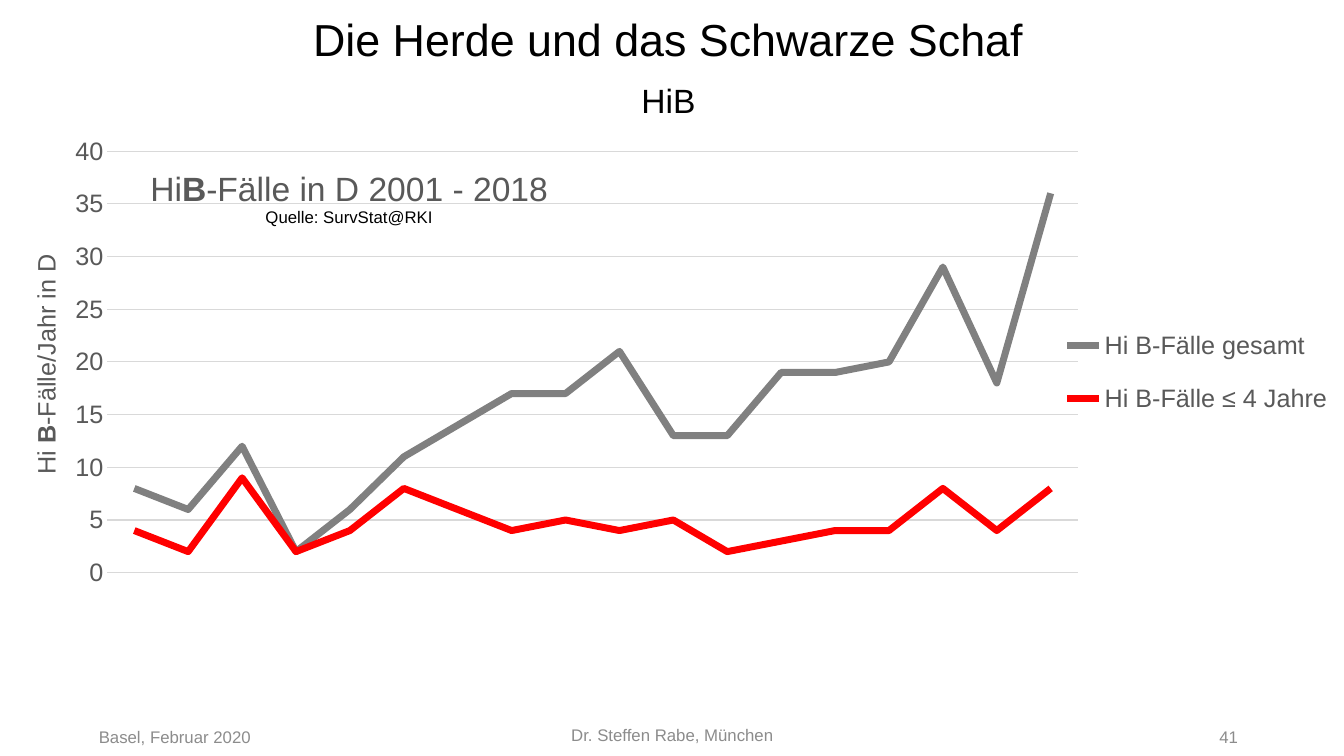
from lxml import etree
from pptx import Presentation
from pptx import util as u
from pptx.chart.data import CategoryChartData
from pptx.dml.color import RGBColor
from pptx.enum import chart as ch, text as t
from pptx.oxml.ns import qn

hue = RGBColor.from_string
GREY, PALE = "595959", "D9D9D9"
LEFT, MID, RIGHT = t.PP_ALIGN.LEFT, t.PP_ALIGN.CENTER, t.PP_ALIGN.RIGHT


def write(par, words, size=18, color="000000", align=MID, bold=False):
    par.alignment = align
    run = par.add_run()
    run.text = words
    font = run.font
    font.name, font.size, font.bold = "Arial", u.Pt(size), bold
    font.color.rgb = hue(color)


def place(node, inner=False, **parts):
    old = node.find(qn("c:layout"))
    if old is not None:
        node.remove(old)
    lay = etree.Element(qn("c:layout"))
    man = etree.SubElement(lay, qn("c:manualLayout"))
    if inner:
        etree.SubElement(man, qn("c:layoutTarget")).set("val", "inner")
    for key in ("xMode", "yMode"):
        etree.SubElement(man, qn("c:" + key)).set("val", "edge")
    for key, val in parts.items():
        etree.SubElement(man, qn("c:" + key)).set("val", str(val))
    over = node.find(qn("c:overlay"))
    if over is None:
        node.insert(0, lay)
    else:
        over.addprevious(lay)


deck = Presentation()
deck.slide_width, deck.slide_height = u.Cm(33.87), u.Cm(19.05)
slide = deck.slides.add_slide(deck.slide_layouts[6])

for x, y, w, words, align in (
    (2.24, 18.06, 7.62, "Basel, Februar 2020", LEFT),
    (11.23, 18.01, 11.43, "Dr. Steffen Rabe, München", MID),
    (23.83, 18.06, 7.62, "41", RIGHT),
):
    frame = slide.shapes.add_textbox(u.Cm(x), u.Cm(y), u.Cm(w), u.Cm(1.02)).text_frame
    frame.word_wrap = True
    frame.vertical_anchor = t.MSO_ANCHOR.MIDDLE
    write(frame.paragraphs[0], words, size=12, color="8C8C8C", align=align)

head = slide.shapes.add_textbox(u.Cm(2.24), u.Cm(0.3), u.Cm(29.21), u.Cm(2.7)).text_frame
head.word_wrap = True
head.margin_top = head.margin_bottom = 0
write(head.paragraphs[0], "Die Herde und das Schwarze Schaf", size=32)
sub = head.add_paragraph()
sub.space_before = u.Pt(10)
write(sub, "HiB", size=24)

data = CategoryChartData()
data.categories = [str(year) for year in range(2001, 2019)]
data.add_series("Hi B-Fälle gesamt",
                [8, 6, 12, 2, 6, 11, 14, 17, 17, 21, 13, 13, 19, 19, 20, 29, 18, 36])
data.add_series("Hi B-Fälle ≤ 4 Jahre",
                [4, 2, 9, 2, 4, 8, 6, 4, 5, 4, 5, 2, 3, 4, 4, 8, 4, 8])
chart = slide.shapes.add_chart(ch.XL_CHART_TYPE.LINE, u.Cm(0.36), u.Cm(3.43),
                               u.Cm(33.5), u.Cm(12.65), data).chart
chart.font.name, chart.font.size = "Calibri", u.Pt(10)
plot = chart.plots[0]
plot.vary_by_categories = False
for row, color in zip(plot.series, ("808080", "FF0000")):
    row.smooth = False
    row.format.line.color.rgb = hue(color)
    row.format.line.width = u.Pt(5)

years, cases = chart.category_axis, chart.value_axis
for axis in (years, cases):
    axis.major_tick_mark = axis.minor_tick_mark = ch.XL_TICK_MARK.NONE
years.tick_label_position = ch.XL_TICK_LABEL_POSITION.NONE
cases.minimum_scale, cases.maximum_scale, cases.major_unit = 0, 40, 5
cases.has_major_gridlines = True
cases.format.line.fill.background()
for line in (years.format.line, cases.major_gridlines.format.line):
    line.color.rgb = hue(PALE)
    line.width = u.Pt(0.75)

chart.has_legend = True
key = chart.legend
key.position = ch.XL_LEGEND_POSITION.RIGHT
key.include_in_layout = False
for font in (years.tick_labels.font, cases.tick_labels.font, key.font):
    font.name, font.size = "Arial", u.Pt(18)
    font.color.rgb = hue(GREY)

side = cases.axis_title
for words, bold in (("Hi ", False), ("B", True), ("-Fälle/Jahr in D", False)):
    write(side.text_frame.paragraphs[0], words, color=GREY, bold=bold)
chart.has_title = True
title = chart.chart_title
for words, bold in (("Hi", False), ("B", True), ("-Fälle in D 2001 - 2018", False)):
    write(title.text_frame.paragraphs[0], words, size=24, color=GREY, bold=bold)
write(title.text_frame.add_paragraph(), "Quelle: SurvStat@RKI", size=12)
title._element.find(qn("c:overlay")).set("val", "1")

area = chart._chartSpace.find(qn("c:chart")).find(qn("c:plotArea"))
place(area, inner=True, x=0.07, y=0.03, w=0.73, h=0.84)
place(title._element, x=0.1, y=0.06)
place(side._element, x=0.01, y=0.23)
place(key._element, x=0.78, y=0.34, w=0.22, h=0.26)

deck.save("out.pptx")
